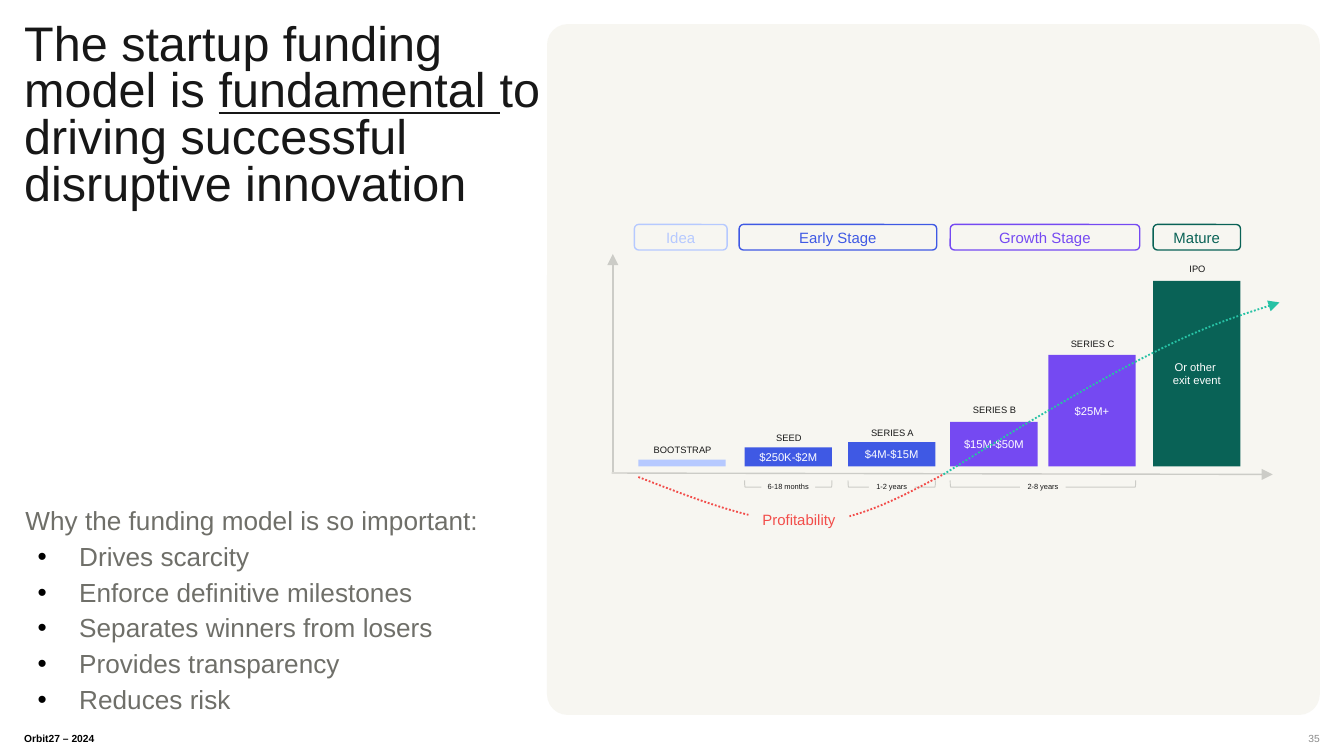
"""Build the slide on startup funding stages."""
from lxml import etree
from pptx import Presentation
from pptx.dml.color import RGBColor
from pptx.enum import dml, shapes, text
from pptx.oxml.ns import qn
from pptx.util import Emu, Pt

COLUMNS, ROWS = 1000, 562.5
UNIT = 9144
BASE, BAR_WIDTH = 347, 65
PILL_TOP, PILL_HEIGHT = 167, 19
COLORS = {
    "panel": "F7F6F1", "ink": "171717", "body": "6F6F69", "number": "8C8C8C",
    "axis": "CCCCC7", "idea": "B6C9FF", "early": "3F59E4", "growth": "7549F2",
    "mature": "096256", "loss": "F24D4A", "profit": "27C2A5",
    "white": "FFFFFF", "black": "000000",
}
STAGES = [
    ("Idea", 472, 69, "idea"), ("Early Stage", 550, 147, "early"),
    ("Growth Stage", 707, 141, "growth"), ("Mature", 858, 65, "mature"),
]
ROUNDS = [
    ("BOOTSTRAP", 329, "", 475, 5, "idea"),
    ("SEED", 320, "$250K-$2M", 554, 14, "early"),
    ("SERIES A", 316, "$4M-$15M", 631, 18, "early"),
    ("SERIES B", 299, "$15M-$50M", 707, 33, "growth"),
    ("SERIES C", 250, "$25M+", 780, 83, "growth"),
    ("IPO", 194, "Or other \nexit event", 858, 138, "mature"),
]
PERIODS = [("6-18 months", 554, 65, 40), ("1-2 years", 631, 65, 34), ("2-8 years", 707, 138, 34)]
BENEFITS = [
    "Drives scarcity", "Enforce definitive milestones", "Separates winners from losers",
    "Provides transparency", "Reduces risk",
]


def grid(*cells):
    """Turn grid counts into lengths."""
    return [Emu(round(cell * UNIT)) for cell in cells]


def color(name):
    """Look up a colour by name."""
    return RGBColor.from_string(COLORS[name])


def write(shape, content, size, ink, align=text.PP_ALIGN.CENTER, spacing=None,
          anchor=text.MSO_ANCHOR.MIDDLE, bold=False):
    """Fill a shape with evenly formatted paragraphs."""
    frame = shape.text_frame
    frame.word_wrap = True
    frame.vertical_anchor = anchor
    frame.margin_left = frame.margin_right = frame.margin_top = frame.margin_bottom = 0
    frame.text = content
    for paragraph in frame.paragraphs:
        paragraph.alignment = align
        paragraph.line_spacing = spacing
        font = paragraph.font
        font.name, font.size, font.bold = "Arial", Pt(size), bold
        font.color.rgb = color(ink)
    return frame


def add_text(slide, box, content, size, ink, **style):
    """Add a text box."""
    return write(slide.shapes.add_textbox(*grid(*box)), content, size, ink, **style)


def add_box(slide, kind, box, fill=None, line=None, weight=0.75):
    """Add a preset shape with optional fill and outline."""
    shape = slide.shapes.add_shape(kind, *grid(*box))
    shape.shadow.inherit = False
    for part, name in ((shape.fill, fill), (shape.line.fill, line)):
        if name:
            part.solid()
            part.fore_color.rgb = color(name)
        else:
            part.background()
    if line:
        shape.line.width = Pt(weight)
    return shape


def add_arrowhead(shape):
    """Put a triangle at the end of a line."""
    outline = shape.element.spPr.find(qn("a:ln"))
    etree.SubElement(outline, qn("a:tailEnd"), type="triangle")


def add_axis(slide, start, end):
    """Add a straight axis with an arrowhead."""
    axis = slide.shapes.add_connector(shapes.MSO_CONNECTOR.STRAIGHT, *grid(*start, *end))
    axis.line.color.rgb = color("axis")
    axis.line.width = Pt(0.75)
    add_arrowhead(axis)
    etree.SubElement(axis.element.spPr, qn("a:effectLst"))


def add_curve(slide, points, line):
    """Add a dotted curve through groups of three Bezier points."""
    builder = slide.shapes.build_freeform(*points[0], scale=UNIT)
    builder.add_line_segments(points[1:], close=False)
    curve = builder.convert_to_shape()
    curve.shadow.inherit = False
    curve.fill.background()
    curve.line.color.rgb = color(line)
    curve.line.width = Pt(1)
    curve.line.dash_style = dml.MSO_LINE.ROUND_DOT
    segments = list(curve.element.iter(qn("a:lnTo")))
    for first, second, third in zip(*[iter(segments)] * 3):
        bezier = etree.Element(qn("a:cubicBezTo"))
        first.addprevious(bezier)
        for segment in (first, second, third):
            bezier.append(segment[0])
            segment.getparent().remove(segment)
    return curve


def add_title(slide):
    """Add the headline with its underlined word."""
    frame = add_text(slide, (18, 18, 389, 264), "", 26, "ink", spacing=0.8,
                     align=text.PP_ALIGN.LEFT, anchor=text.MSO_ANCHOR.TOP)
    paragraph = frame.paragraphs[0]
    for part, underline in (("The startup funding model is ", False), ("fundamental ", True),
                            ("to driving successful disruptive innovation", False)):
        run = paragraph.add_run()
        run.text, run.font.underline = part, underline


def add_benefits(slide):
    """Add the introduction and its bulleted list."""
    content = "\n".join(["Why the funding model is so important:"] + BENEFITS)
    frame = add_text(slide, (18, 371, 427, 161), content, 14, "body", spacing=0.9,
                     align=text.PP_ALIGN.LEFT, anchor=text.MSO_ANCHOR.BOTTOM)
    for index, paragraph in enumerate(frame.paragraphs):
        paragraph.space_after = Pt(4)
        properties = paragraph.font._element.getparent()
        margin, indent = grid(41, -31) if index else grid(1, 0)
        properties.set("marL", str(margin))
        properties.set("indent", str(indent))
        if index:
            bullet_color = etree.Element(qn("a:buClr"))
            etree.SubElement(bullet_color, qn("a:srgbClr"), val=COLORS["black"])
            bullet_font = etree.Element(qn("a:buFont"), typeface="Arial")
            bullet = etree.Element(qn("a:buChar"), char="•")
            for part in (bullet_color, bullet_font, bullet):
                properties.find(qn("a:defRPr")).addprevious(part)


def add_round(slide, label, label_top, amount, left, height, fill):
    """Add a funding round as a bar with its label above."""
    box = (left, BASE - height, BAR_WIDTH, height)
    bar = add_box(slide, shapes.MSO_SHAPE.RECTANGLE, box, fill)
    if amount:
        write(bar, amount, 6, "white")
    add_text(slide, (left + 2, label_top, 62, 13), label, 5, "ink", spacing=0.8)


def add_tag(slide, box, content, size, ink):
    """Add a label that masks the line behind it."""
    tag = add_box(slide, shapes.MSO_SHAPE.RECTANGLE, box, "panel")
    write(tag, content, size, ink, spacing=0.8)


def add_period(slide, label, left, width, label_width):
    """Add an upward bracket with its duration."""
    center, middle, depth = left + width / 2, 360, 5
    box = (center - depth / 2, middle - width / 2, depth, width)
    bracket = add_box(slide, shapes.MSO_SHAPE.LEFT_BRACKET, box, line="axis", weight=0.5)
    bracket.rotation = 270
    add_tag(slide, (center - label_width / 2, 358, label_width, 10), label, 4, "ink")


def main():
    """Build and save the presentation."""
    presentation = Presentation()
    presentation.slide_width, presentation.slide_height = grid(COLUMNS, ROWS)
    slide = presentation.slides.add_slide(presentation.slide_layouts[6])
    rounded = shapes.MSO_SHAPE.ROUNDED_RECTANGLE
    add_text(slide, (18, 545, 70, 8), "Orbit27 – 2024", 5.5, "black", bold=True,
             align=text.PP_ALIGN.LEFT, anchor=text.MSO_ANCHOR.TOP)
    panel = add_box(slide, rounded, (407, 18, 575, 514), "panel")
    panel.adjustments[0] = 0.03
    add_title(slide)
    add_text(slide, (922, 545, 60, 8), "35", 5.5, "number",
             align=text.PP_ALIGN.RIGHT, anchor=text.MSO_ANCHOR.TOP)
    add_benefits(slide)
    add_axis(slide, (456, 351), (456, 189))
    add_axis(slide, (455, 352), (947, 353))
    for name, left, width, tint in STAGES:
        pill = add_box(slide, rounded, (left, PILL_TOP, width, PILL_HEIGHT), line=tint)
        write(pill, name, 8, tint)
    for funding_round in ROUNDS:
        add_round(slide, *funding_round)
    for period in PERIODS:
        add_period(slide, *period)
    add_curve(slide, [(475, 355), (519, 372), (562, 389), (600, 389),
                      (638, 388), (670, 370), (702, 353)], "loss")
    add_arrowhead(add_curve(slide, [(702, 353), (758, 318), (815, 284), (857, 263),
                                    (898, 242), (925, 234), (952, 225)], "profit"))
    add_tag(slide, (557, 381, 75, 14), "Profitability", 8, "loss")
    presentation.save("out.pptx")


if __name__ == "__main__":
    main()
